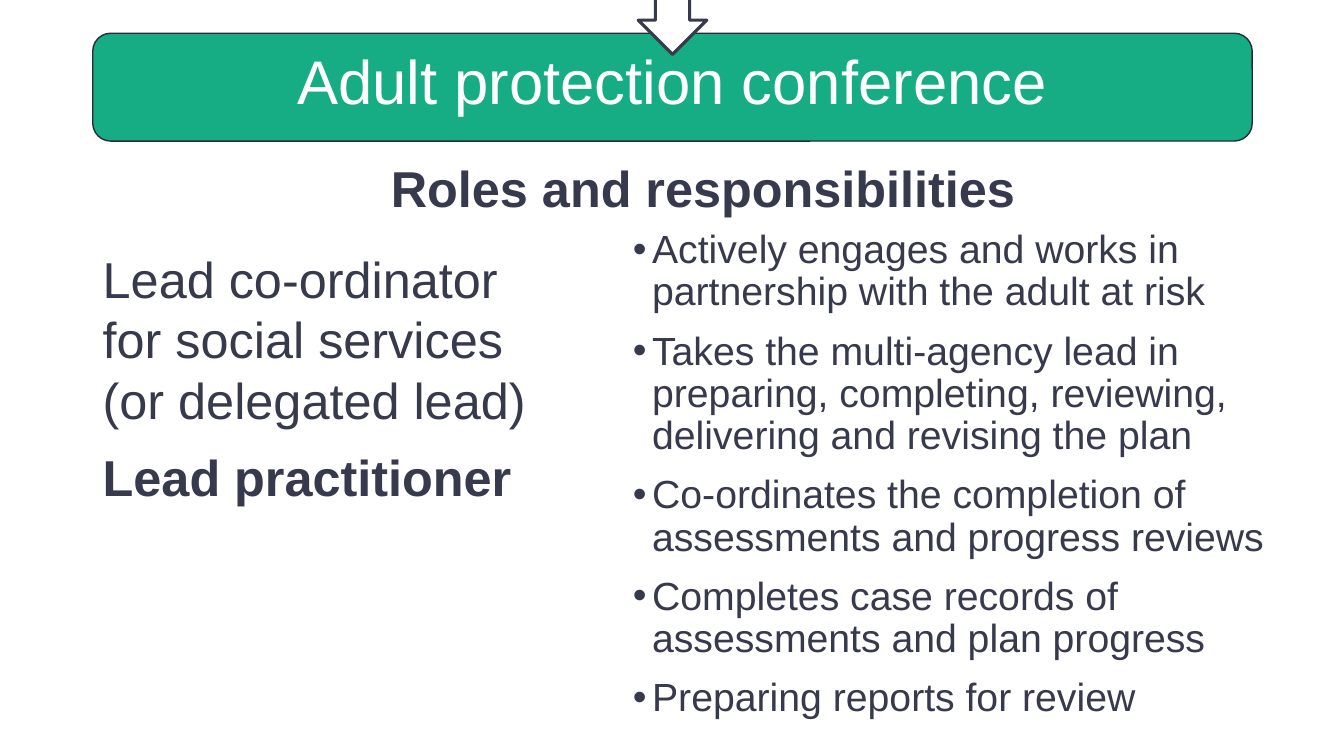
from dataclasses import dataclass

from lxml.etree import SubElement
from pptx import Presentation
from pptx.dml.color import RGBColor
from pptx.enum.shapes import MSO_SHAPE
from pptx.enum.text import MSO_ANCHOR, PP_ALIGN
from pptx.oxml.ns import qn
from pptx.util import Inches, Pt


@dataclass(frozen=True)
class Theme:
    font: str = "Arial"
    ink: str = "37394C"
    outline: str = "292A38"
    green: str = "16AD85"
    white: str = "FFFFFF"
    title_size: int = 44
    heading_size: int = 36
    body_size: int = 28


THEME = Theme()
WIDTH, HEIGHT = 13.33, 7.5
LEFT_MARGIN = 0.92
RESPONSIBILITIES = [
    "Actively engages and works in partnership with the adult at risk",
    "Takes the\u00a0multi-agency\u00a0lead in preparing, completing, reviewing, "
    "delivering and revising the plan",
    "Co-ordinates the completion of assessments and progress reviews",
    "Completes case records of assessments and plan progress",
    "Preparing reports for review",
]


def add_outlined_shape(slide, kind, box, fill, line, line_width):
    shape = slide.shapes.add_shape(kind, *map(Inches, box))
    shape.shadow.inherit = False
    shape.fill.solid()
    shape.fill.fore_color.rgb = RGBColor.from_string(fill)
    shape.line.color.rgb = RGBColor.from_string(line)
    shape.line.width = Pt(line_width)
    return shape


def add_bullet(paragraph, indent=0.19):
    properties = paragraph._p.get_or_add_pPr()
    properties.set("marL", str(Inches(indent)))
    properties.set("indent", str(-Inches(indent)))
    SubElement(properties, qn("a:buFont"), typeface=THEME.font)
    SubElement(properties, qn("a:buChar"), char="•")


def write_paragraphs(text_frame, texts, size, color=THEME.ink, bold=False,
                     bullets=False, **formats):
    """Append texts as paragraphs, filling the empty first paragraph if there is one."""
    text_frame.word_wrap = True
    for text in texts:
        paragraph = text_frame.paragraphs[0]
        if paragraph.runs:
            paragraph = text_frame.add_paragraph()
        if bullets:
            add_bullet(paragraph)
        for name, value in formats.items():
            setattr(paragraph, name, value)
        run = paragraph.add_run()
        run.text = text
        run.font.color.rgb = RGBColor.from_string(color)
        for name, value in {"name": THEME.font, "size": Pt(size), "bold": bold}.items():
            setattr(run.font, name, value)


def add_text_frame(slide, box):
    return slide.shapes.add_textbox(*map(Inches, box)).text_frame


def add_banner(slide, box):
    left, top, width, height = box
    banner = add_outlined_shape(slide, MSO_SHAPE.ROUNDED_RECTANGLE, box,
                                THEME.green, THEME.outline, 1)
    banner.text_frame.vertical_anchor = MSO_ANCHOR.MIDDLE
    write_paragraphs(banner.text_frame, ["Adult protection conference"],
                     THEME.title_size, THEME.white,
                     alignment=PP_ALIGN.CENTER, line_spacing=0.8)
    # Arrow entering from the slide's top edge, centred on the banner
    arrow_width, arrow_height = 0.68, 1
    arrow_box = (left + (width - arrow_width) / 2, top + 0.21 - arrow_height,
                 arrow_width, arrow_height)
    add_outlined_shape(slide, MSO_SHAPE.DOWN_ARROW, arrow_box,
                       THEME.white, THEME.ink, 2.25)


def add_heading(slide, box):
    write_paragraphs(add_text_frame(slide, box), ["Roles and responsibilities"],
                     THEME.heading_size, bold=True, alignment=PP_ALIGN.CENTER,
                     line_spacing=0.9, space_after=Pt(6))


def add_role(slide, box):
    text_frame = add_text_frame(slide, box)
    size = THEME.heading_size
    write_paragraphs(text_frame, ["Lead co-ordinator for social services"], size)
    write_paragraphs(text_frame, ["(or delegated lead)"], size, space_after=Pt(12))
    write_paragraphs(text_frame, ["Lead practitioner"], size, bold=True,
                     space_after=Pt(12))


def add_responsibilities(slide, box):
    write_paragraphs(add_text_frame(slide, box), RESPONSIBILITIES, THEME.body_size,
                     bullets=True, line_spacing=0.9, space_after=Pt(12))


def main():
    presentation = Presentation()
    presentation.slide_width = Inches(WIDTH)
    presentation.slide_height = Inches(HEIGHT)
    slide = presentation.slides.add_slide(presentation.slide_layouts[6])

    # Banner and heading
    add_banner(slide, (LEFT_MARGIN, 0.33, 11.5, 1.07))
    add_heading(slide, (1.11, 1.58, 11.73, 0.65))
    # Role on the left, responsibilities on the right
    add_role(slide, (LEFT_MARGIN, 2.41, 4.75, 2.69))
    add_responsibilities(slide, (6.18, 2.23, 6.67, 5.02))

    presentation.save("out.pptx")


if __name__ == "__main__":
    main()
